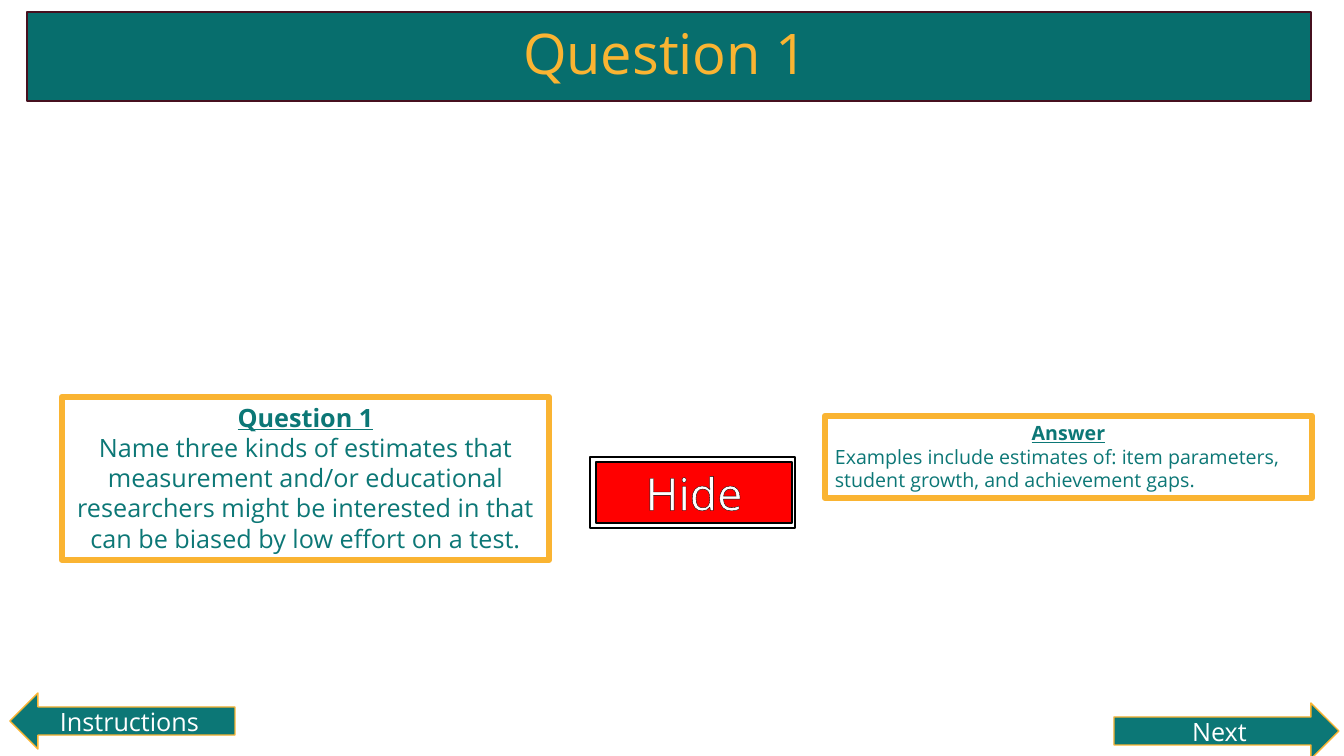
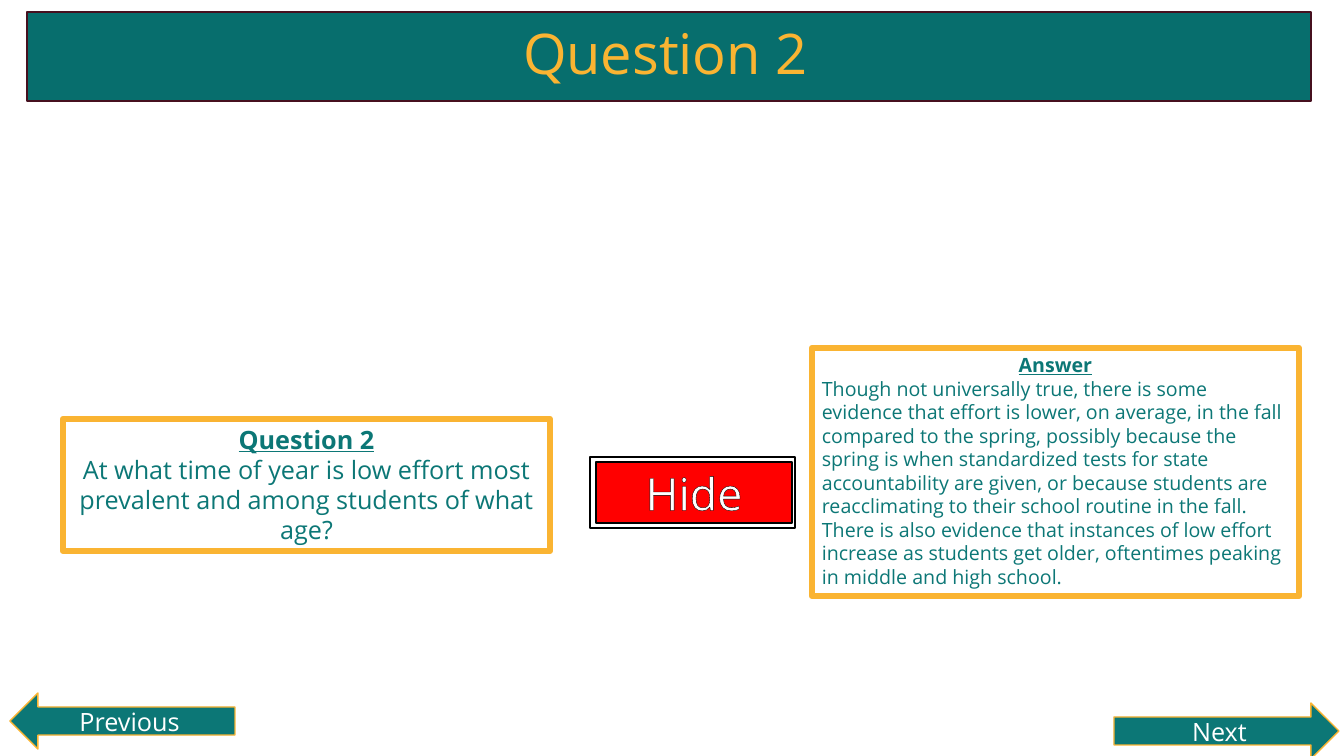
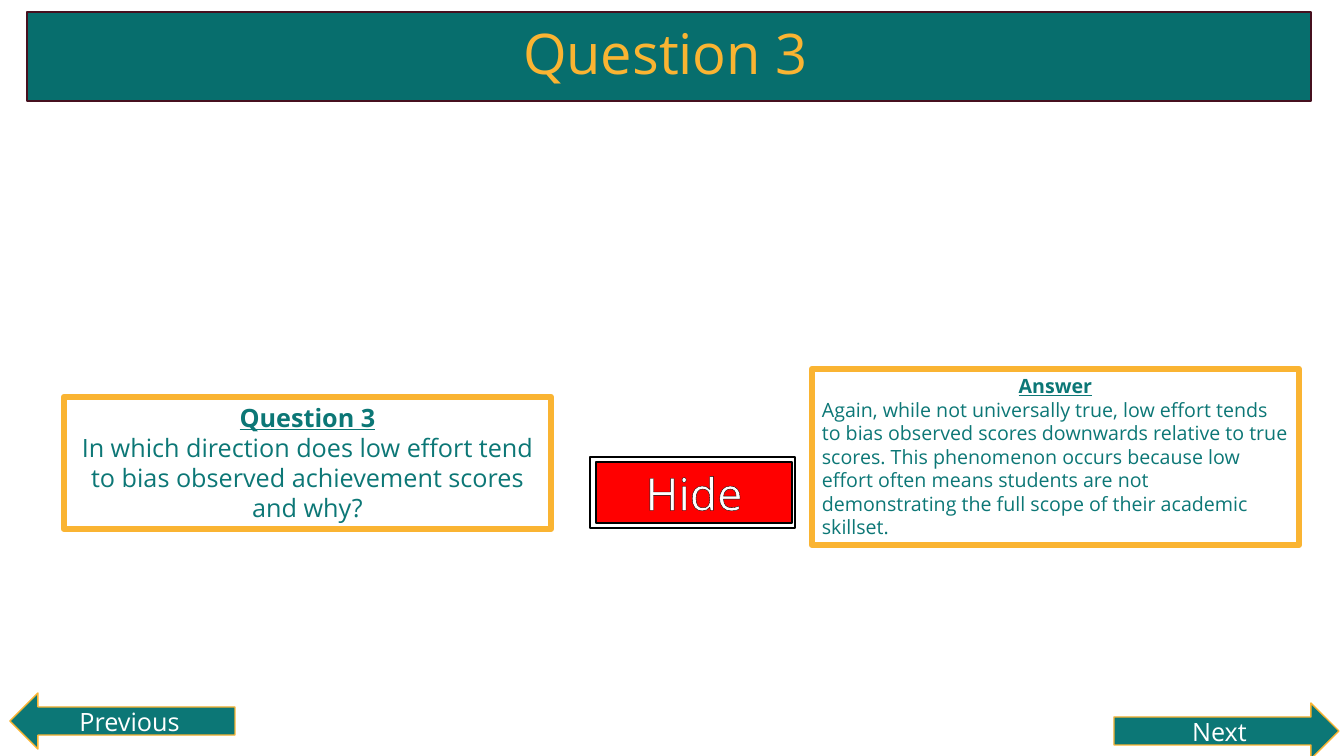
from lxml import etree
from pptx import Presentation
from pptx import util as u
from pptx.dml.color import RGBColor
from pptx.enum import shapes, text
from pptx.oxml.ns import qn

PX = 914400 / 100.8
WIDTH, HEIGHT = 1344, 756
FONT = "Open Sans"
BAND, BAND_EDGE = "076E6D", "46101F"
TEAL, GOLD = "0C7776", "FAB432"
RED, WHITE, BLACK = "FF0000", "FFFFFF", "000000"
CARD_WIDTH = 487
LEFT, CENTER = text.PP_ALIGN.LEFT, text.PP_ALIGN.CENTER
RECTANGLE = shapes.MSO_SHAPE.RECTANGLE

# Each card: body text, then left, top and height
QUESTIONS = [
    {
        "back": "Instructions",
        "question": ("Name three kinds of estimates that measurement and/or educational "
                     "researchers might be interested in that can be biased by low effort "
                     "on a test.", 62, 397, 163),
        "answer": ("Examples include estimates of: item parameters, student growth, and "
                   "achievement gaps.", 825, 416, 82),
    },
    {
        "back": "Previous",
        "question": ("At what time of year is low effort most prevalent and among students "
                     "of what age?", 63, 419, 132),
        "answer": ("Though not universally true, there is some evidence that effort is "
                   "lower, on average, in the fall compared to the spring, possibly because "
                   "the spring is when standardized tests for state accountability are "
                   "given, or because students are reacclimating to their school routine in "
                   "the fall. There is also evidence that instances of low effort increase "
                   "as students get older, oftentimes peaking in middle and high school.",
                   812, 348, 248),
    },
    {
        "back": "Previous",
        "question": ("In which direction does low effort tend to bias observed achievement "
                     "scores and why?", 64, 397, 132),
        "answer": ("Again, while not universally true, low effort tends to bias observed "
                   "scores downwards relative to true scores. This phenomenon occurs because "
                   "low effort often means students are not demonstrating the full scope of "
                   "their academic skillset.", 812, 369, 176),
    },
]


def color(value):
    return RGBColor.from_string(value)


def emu(*lengths):
    return [u.Emu(round(length * PX)) for length in lengths]


def add_box(parent, kind, box, fill, line, weight):
    shape = parent.shapes.add_shape(kind, *emu(*box))
    shape.shadow.inherit = False
    if fill:
        shape.fill.solid()
        shape.fill.fore_color.rgb = color(fill)
    else:
        shape.fill.background()
    shape.line.color.rgb = color(line)
    shape.line.width = u.Pt(weight)
    return shape


def write(shape, content, size, ink, align=CENTER, anchor=text.MSO_ANCHOR.MIDDLE,
          heading=False, spacing=None, outline=None, first=True):
    """Put one paragraph into the shape; a heading is bold and underlined."""
    frame = shape.text_frame
    frame.word_wrap = True
    frame.vertical_anchor = anchor
    paragraph = frame.paragraphs[0] if first else frame.add_paragraph()
    paragraph.alignment = align
    if spacing:
        paragraph.line_spacing = spacing
    run = paragraph.add_run()
    run.text = content
    font = run.font
    font.name, font.size = FONT, u.Pt(size)
    font.bold = font.underline = heading
    font.color.rgb = color(ink)
    if outline:
        line = etree.Element(qn("a:ln"), w=str(u.Pt(0.75)))
        fill = etree.SubElement(line, qn("a:solidFill"))
        etree.SubElement(fill, qn("a:srgbClr"), val=outline)
        font._element.insert(0, line)


def add_title(slide, title):
    add_box(slide, RECTANGLE, (27, 12, 1284, 89), BAND, BAND_EDGE, 1)
    title_box = slide.shapes.add_textbox(*emu(32, 22, 1267, 68))
    write(title_box, title, 40, GOLD, spacing=0.9)


def add_navigation(slide, back):
    for label, kind, left, top in (
        (back, shapes.MSO_SHAPE.LEFT_ARROW, 10, 693),
        ("Next", shapes.MSO_SHAPE.RIGHT_ARROW, 1114, 703),
    ):
        arrow = add_box(slide, kind, (left, top, 225, 56), TEAL, GOLD, 1)
        write(arrow, label, 18, WHITE)


def add_card(slide, heading, card, size, align):
    body, left, top, height = card
    shape = add_box(slide, RECTANGLE, (left, top, CARD_WIDTH, height), None, GOLD, 4.5)
    top_anchor = text.MSO_ANCHOR.TOP
    write(shape, heading, size, TEAL, anchor=top_anchor, heading=True)
    write(shape, body, size, TEAL, align=align, anchor=top_anchor, first=False)
    shape.text_frame.auto_size = text.MSO_AUTO_SIZE.SHAPE_TO_FIT_TEXT


def add_hide_button(slide):
    group = slide.shapes.add_group_shape()
    add_box(group, RECTANGLE, (590, 457, 205, 71), WHITE, BLACK, 1.5)
    button = add_box(group, RECTANGLE, (596, 462, 196, 61), RED, BLACK, 1.5)
    write(button, "Hide", 32, WHITE, outline=BLACK)


def main():
    presentation = Presentation()
    presentation.slide_width, presentation.slide_height = emu(WIDTH, HEIGHT)
    for number, item in enumerate(QUESTIONS, 1):
        slide = presentation.slides.add_slide(presentation.slide_layouts[6])
        title = f"Question {number}"
        add_title(slide, title)
        add_navigation(slide, item["back"])
        add_card(slide, title, item["question"], 18, CENTER)
        add_card(slide, "Answer", item["answer"], 14, LEFT)
        add_hide_button(slide)
    presentation.save("out.pptx")


if __name__ == "__main__":
    main()
